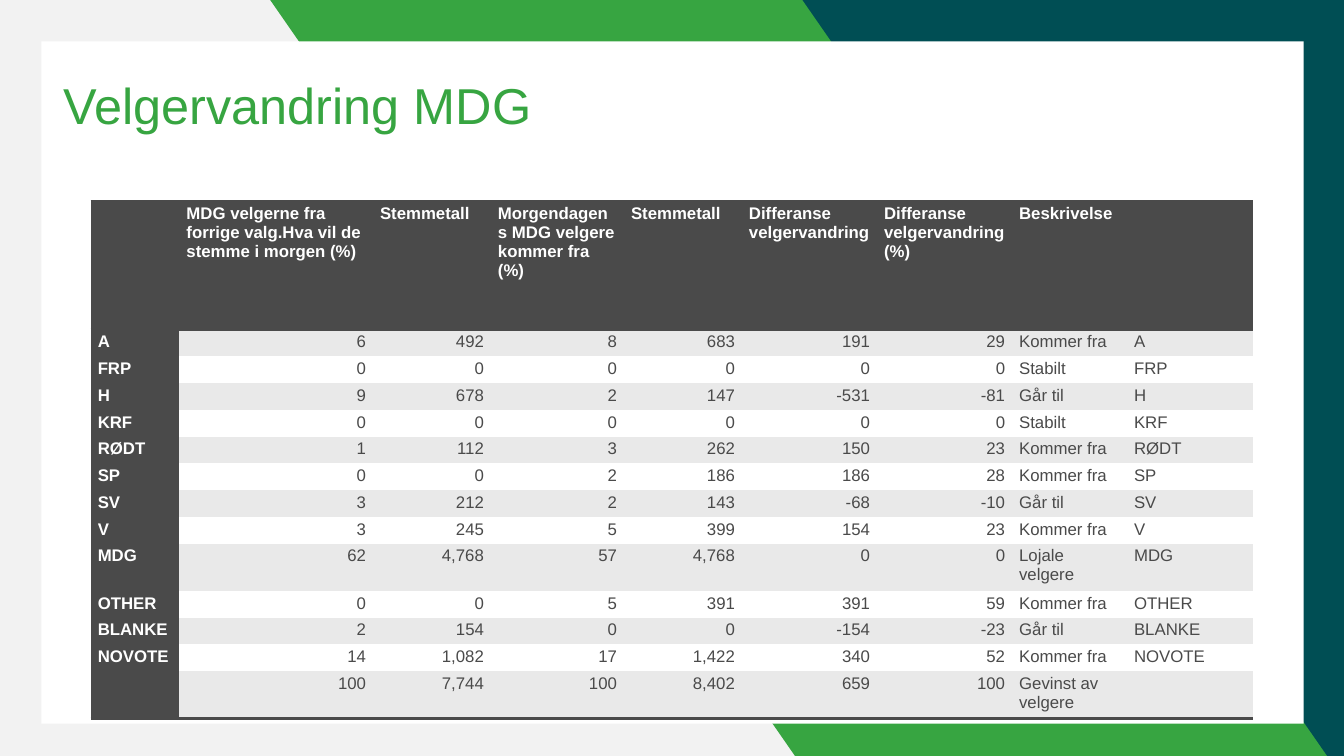
"""Builds the slide "Velgervandring MDG" with its table of voter movements."""
from pptx import Presentation
from pptx.dml.color import RGBColor
from pptx.enum.shapes import MSO_SHAPE
from pptx.enum.text import MSO_ANCHOR, PP_ALIGN
from pptx.oxml import parse_xml
from pptx.oxml.ns import nsdecls, qn
from pptx.util import Inches, Pt

WHITE = RGBColor(0xFF, 0xFF, 0xFF)
PALE_GREY = RGBColor(0xF2, 0xF2, 0xF2)
BAND_GREY = RGBColor(0xE9, 0xE9, 0xE9)
DARK_GREY = RGBColor(0x4A, 0x4A, 0x4A)
TEAL = RGBColor(0x00, 0x4E, 0x54)
GREEN = RGBColor(0x37, 0xA5, 0x41)
FONT = "Arial"
NO_STYLE_ID = "{2D5ABB26-0587-4C30-8999-92F81FD0307C}"

HEADINGS = ("", "MDG velgerne fra forrige valg.Hva vil de stemme i morgen (%)",
            "Stemmetall", "Morgendagens MDG velgere kommer fra (%)", "Stemmetall",
            "Differanse velgervandring", "Differanse velgervandring (%)",
            "Beskrivelse", "")
PARTIES = (
    ("A", "6", "492", "8", "683", "191", "29", "Kommer fra"),
    ("FRP", "0", "0", "0", "0", "0", "0", "Stabilt"),
    ("H", "9", "678", "2", "147", "-531", "-81", "Går til"),
    ("KRF", "0", "0", "0", "0", "0", "0", "Stabilt"),
    ("RØDT", "1", "112", "3", "262", "150", "23", "Kommer fra"),
    ("SP", "0", "0", "2", "186", "186", "28", "Kommer fra"),
    ("SV", "3", "212", "2", "143", "-68", "-10", "Går til"),
    ("V", "3", "245", "5", "399", "154", "23", "Kommer fra"),
    ("MDG", "62", "4,768", "57", "4,768", "0", "0", "Lojale velgere"),
    ("OTHER", "0", "0", "5", "391", "391", "59", "Kommer fra"),
    ("BLANKE", "2", "154", "0", "0", "-154", "-23", "Går til"),
    ("NOVOTE", "14", "1,082", "17", "1,422", "340", "52", "Kommer fra"),
    ("", "100", "7,744", "100", "8,402", "659", "100", "Gevinst av velgere"),
)
COLUMN_WIDTHS = (0.88, 1.92, 1.17, 1.32, 1.17, 1.34, 1.34, 1.14, 1.25)
TABLE_HEIGHT, HEADER_HEIGHT, TALL_ROW_HEIGHT = 5.13, 1.27, 0.47
TALL_ROWS = (9, 13)


def add_panel(kind, left, top, width, height, color):
    panel = slide.shapes.add_shape(
        kind, Inches(left), Inches(top), Inches(width), Inches(height))
    panel.shadow.inherit = False
    panel.fill.solid()
    panel.fill.fore_color.rgb = color
    panel.line.fill.background()
    return panel


def add_border(cell, side):
    cell._tc.get_or_add_tcPr().insert(0, parse_xml(
        f'<a:{side} {nsdecls("a")} w="{Pt(2)}"><a:solidFill>'
        f'<a:srgbClr val="{DARK_GREY}"/></a:solidFill></a:{side}>'))


prs = Presentation()
prs.slide_width, prs.slide_height = Inches(13.33), Inches(7.5)
slide = prs.slides.add_slide(prs.slide_layouts[6])

add_panel(MSO_SHAPE.RECTANGLE, 0, 0, 13.33, 7.54, PALE_GREY)
add_panel(MSO_SHAPE.RECTANGLE, 7.94, 0, 5.4, 7.54, TEAL)
green_band = add_panel(MSO_SHAPE.PARALLELOGRAM, 2.68, 0, 10.51, 7.54, GREEN)
green_band.adjustments[0] = 0.694
green_band._element.spPr.xfrm.set("flipH", "1")
add_panel(MSO_SHAPE.RECTANGLE, 0.41, 0.41, 12.52, 6.77, WHITE)

title = slide.shapes.add_textbox(
    Inches(0.59), Inches(0.55), Inches(4.72), Inches(0.83)).text_frame
title.word_wrap = True
title.vertical_anchor = MSO_ANCHOR.BOTTOM
title.margin_left = title.margin_right = 0
title.margin_top = title.margin_bottom = Inches(0.04)
heading = title.paragraphs[0]
heading.text = "Velgervandring MDG"
heading.alignment = PP_ALIGN.CENTER
heading.line_spacing = 0.9
heading.font.name, heading.font.size = FONT, Pt(36)
heading.font.color.rgb = GREEN

rows = [HEADINGS] + [party + (party[0],) for party in PARTIES]
last_row = len(rows) - 1
voters = slide.shapes.add_table(
    len(rows), len(HEADINGS), Inches(0.9), Inches(2),
    Inches(sum(COLUMN_WIDTHS)), Inches(TABLE_HEIGHT)).table
voters.first_col = True
voters.horz_banding = False
voters._tbl.tblPr.find(qn("a:tableStyleId")).text = NO_STYLE_ID
for column, width in zip(voters.columns, COLUMN_WIDTHS):
    column.width = Inches(width)

tall_total = TALL_ROW_HEIGHT * len(TALL_ROWS)
row_height = (TABLE_HEIGHT - HEADER_HEIGHT - tall_total) / (last_row - len(TALL_ROWS))
for r, values in enumerate(rows):
    if r == 0:
        voters.rows[r].height = Inches(HEADER_HEIGHT)
    else:
        voters.rows[r].height = Inches(TALL_ROW_HEIGHT if r in TALL_ROWS else row_height)
    for c, value in enumerate(values):
        cell = voters.cell(r, c)
        is_label = r == 0 or c == 0
        cell.margin_left = cell.margin_right = Inches(0.07)
        cell.margin_top = cell.margin_bottom = Inches(0.03)
        cell.fill.solid()
        cell.fill.fore_color.rgb = DARK_GREY if is_label else BAND_GREY if r % 2 else WHITE
        if r in (0, last_row):
            add_border(cell, "lnB")
        if r == 0:
            add_border(cell, "lnT")
        entry = cell.text_frame.paragraphs[0]
        if value:
            entry.text = value
        entry.alignment = PP_ALIGN.RIGHT if r > 0 and 1 <= c <= 6 else PP_ALIGN.LEFT
        entry.font.name, entry.font.size = FONT, Pt(12)
        entry.font.bold = is_label
        entry.font.color.rgb = WHITE if is_label else DARK_GREY

prs.save("out.pptx")
